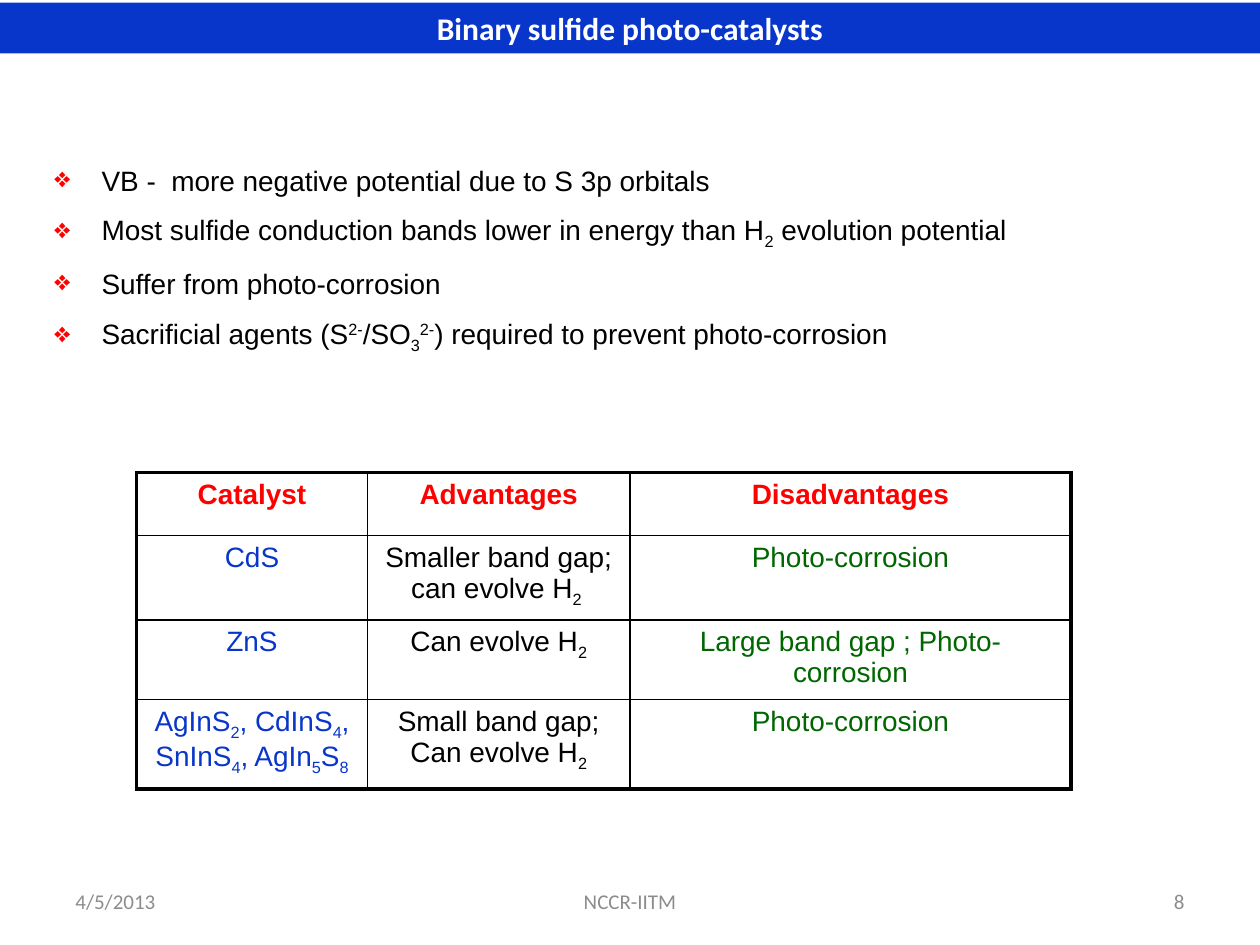
from typing import NamedTuple

from lxml import etree
from pptx import Presentation
from pptx.dml.color import RGBColor
from pptx.enum.text import MSO_ANCHOR, MSO_AUTO_SIZE, PP_ALIGN
from pptx.oxml.ns import qn
from pptx.util import Pt

LEFT, CENTER, RIGHT = PP_ALIGN.LEFT, PP_ALIGN.CENTER, PP_ALIGN.RIGHT
MIDDLE = MSO_ANCHOR.MIDDLE
NO_AUTOSIZE = MSO_AUTO_SIZE.NONE
TITLE_ONLY_LAYOUT = 5

WHITE = RGBColor(0xFF, 0xFF, 0xFF)
BLACK = RGBColor(0x00, 0x00, 0x00)
BLUE = RGBColor(0x08, 0x36, 0xCA)
RED = RGBColor(0xFF, 0x00, 0x00)
GREEN = RGBColor(0x00, 0x66, 0x00)
GRAY = RGBColor(0x8C, 0x8C, 0x8C)

BASELINES = {"_": "-25000", "^": "30000"}
OUTER_BORDER, INNER_BORDER = Pt(2.25), Pt(1)
BULLET_INDENT = Pt(27)


class TextStyle(NamedTuple):
    size: float
    name: str
    color: RGBColor
    bold: bool = False


class Footer(NamedTuple):
    text: str
    left: float
    width: float
    alignment: PP_ALIGN


TITLE_STYLE = TextStyle(18, "Calibri", WHITE, True)
FOOTER_STYLE = TextStyle(12, "Calibri", GRAY)
BODY_STYLE = TextStyle(16, "Arial", BLACK)
HEADER_STYLE = BODY_STYLE._replace(color=RED, bold=True)
COLUMN_STYLES = [BODY_STYLE._replace(color=color) for color in (BLUE, BLACK, GREEN)]

FOOTERS = [
    Footer("4/5/2013", 36, 168, LEFT),
    Footer("NCCR-IITM", 246, 228, CENTER),
    Footer("8", 516, 168, RIGHT),
]

# Between bars, a part starting with _ is subscript and with ^ superscript.
BULLETS = [
    "VB -  more negative potential due to S 3p orbitals",
    "Most sulfide conduction bands lower in energy than H|_2| evolution potential",
    "Suffer from photo-corrosion",
    "Sacrificial agents (S|^2-|/SO|_3|^2-|) required to prevent photo-corrosion",
]

COLUMN_WIDTHS = [132, 150, 252]
ROW_HEIGHTS = [36, 48, 45.5, 51]
CATALYST_ROWS = [
    ["Catalyst", "Advantages", "Disadvantages"],
    ["CdS", "Smaller band gap; can evolve H|_2 ", "Photo-corrosion"],
    ["ZnS", "Can evolve H|_2", "Large band gap ; Photo-corrosion"],
    ["AgInS|_2|, CdInS|_4|, SnInS|_4|, AgIn|_5|S|_8",
     "Small band gap; Can evolve H|_2", "Photo-corrosion"],
]


def write_paragraph(paragraph, text: str, style: TextStyle, alignment=LEFT) -> None:
    """Fill a paragraph, turning the marked parts into sub- and superscripts."""
    paragraph.alignment = alignment
    formats = {"size": Pt(style.size), "name": style.name, "bold": style.bold}
    for part in text.split("|"):
        baseline = BASELINES.get(part[0])
        run = paragraph.add_run()
        run.text = part[1:] if baseline else part
        for attribute, value in formats.items():
            setattr(run.font, attribute, value)
        run.font.color.rgb = style.color
        if baseline:
            run.font._element.set("baseline", baseline)


def add_text_box(slide, left: float, top: float, width: float, height: float):
    frame = slide.shapes.add_textbox(Pt(left), Pt(top), Pt(width), Pt(height)).text_frame
    frame.word_wrap = True
    return frame


def add_title(slide, text: str) -> None:
    title = slide.shapes.title
    box = {"left": Pt(0), "top": Pt(1.5), "width": Pt(720), "height": Pt(29)}
    for attribute, value in box.items():
        setattr(title, attribute, value)
    title.fill.solid()
    title.fill.fore_color.rgb = BLUE
    title.text_frame.auto_size = NO_AUTOSIZE
    title.text_frame.vertical_anchor = MIDDLE
    write_paragraph(title.text_frame.paragraphs[0], text, TITLE_STYLE, CENTER)


def add_footer(slide, footer: Footer) -> None:
    frame = add_text_box(slide, footer.left, 500.5, footer.width, 29)
    frame.vertical_anchor = MIDDLE
    write_paragraph(frame.paragraphs[0], footer.text, FOOTER_STYLE, footer.alignment)


def set_diamond_bullet(paragraph) -> None:
    properties = paragraph._p.get_or_add_pPr()
    properties.set("marL", str(BULLET_INDENT))
    properties.set("indent", str(-BULLET_INDENT))
    color = etree.SubElement(properties, qn("a:buClr"))
    etree.SubElement(color, qn("a:srgbClr"), val=str(RED))
    etree.SubElement(properties, qn("a:buChar"), char="❖")


def add_bullets(slide) -> None:
    frame = add_text_box(slide, 24, 90, 654, 113)
    for index, text in enumerate(BULLETS):
        paragraph = frame.add_paragraph() if index else frame.paragraphs[0]
        set_diamond_bullet(paragraph)
        if index:
            paragraph.space_before = Pt(9)
        write_paragraph(paragraph, text, BODY_STYLE)


def set_borders(cell, outer_sides: dict[str, bool]) -> None:
    properties = cell._tc.get_or_add_tcPr()
    for index, (side, is_outer) in enumerate(outer_sides.items()):
        width = OUTER_BORDER if is_outer else INNER_BORDER
        line = etree.Element(qn(f"a:ln{side}"), w=str(width))
        fill = etree.SubElement(line, qn("a:solidFill"))
        etree.SubElement(fill, qn("a:srgbClr"), val=str(BLACK))
        properties.insert(index, line)


def add_catalyst_table(slide) -> None:
    last_row, last_column = len(ROW_HEIGHTS) - 1, len(COLUMN_WIDTHS) - 1
    table = slide.shapes.add_table(
        last_row + 1, last_column + 1, Pt(78), Pt(270),
        Pt(sum(COLUMN_WIDTHS)), Pt(sum(ROW_HEIGHTS))).table
    table.first_row = table.horz_banding = False
    for column, width in zip(table.columns, COLUMN_WIDTHS):
        column.width = Pt(width)
    for row, height in zip(table.rows, ROW_HEIGHTS):
        row.height = Pt(height)
    for i, texts in enumerate(CATALYST_ROWS):
        for j, text in enumerate(texts):
            cell = table.cell(i, j)
            cell.fill.background()
            set_borders(cell, {"L": j == 0, "R": j == last_column,
                               "T": i == 0, "B": i == last_row})
            style = COLUMN_STYLES[j] if i else HEADER_STYLE
            write_paragraph(cell.text_frame.paragraphs[0], text, style, CENTER)


def main() -> None:
    presentation = Presentation()
    presentation.slide_width, presentation.slide_height = Pt(720), Pt(540)
    slide = presentation.slides.add_slide(presentation.slide_layouts[TITLE_ONLY_LAYOUT])
    for footer in FOOTERS:
        add_footer(slide, footer)
    add_title(slide, "Binary sulfide photo-catalysts")
    add_catalyst_table(slide)
    add_bullets(slide)
    presentation.save("out.pptx")


if __name__ == "__main__":
    main()
